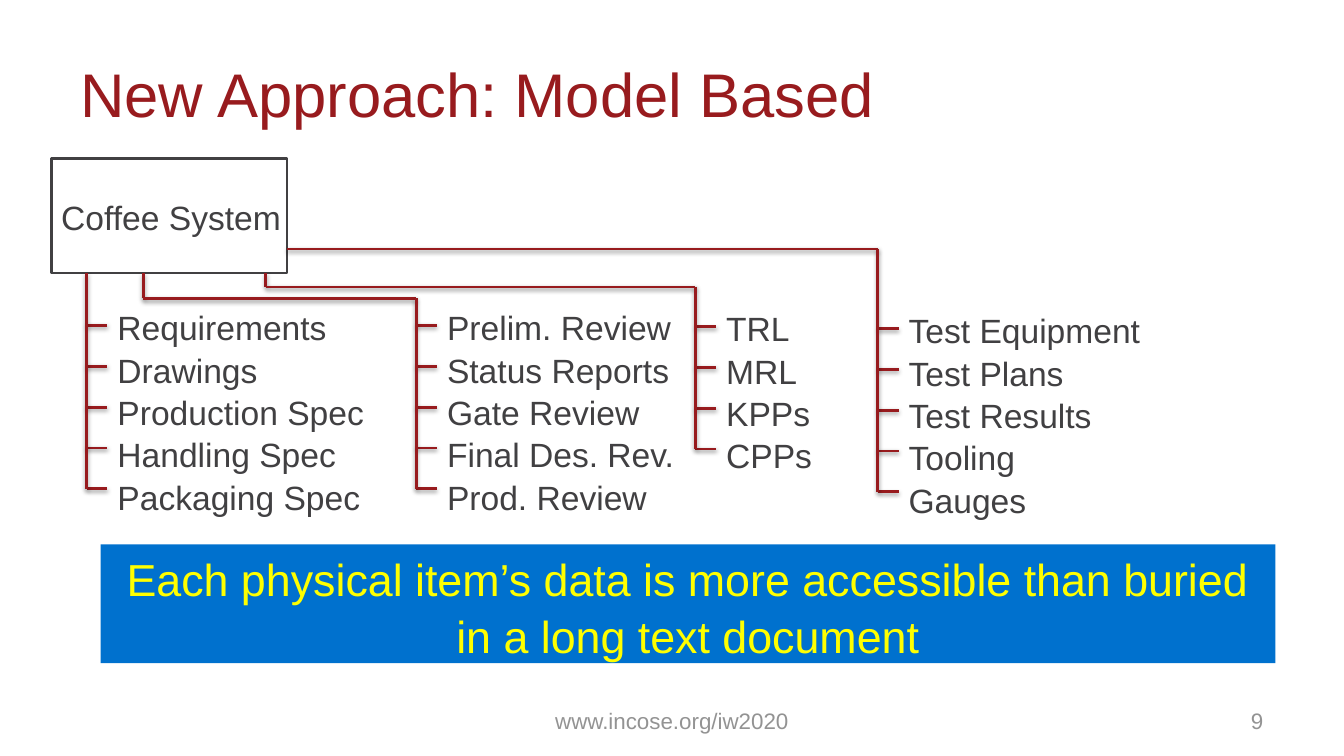
import itertools

import lxml.etree
import pptx
import pptx.dml.color
import pptx.enum.shapes
import pptx.enum.text
import pptx.oxml.ns
import pptx.util

RED = pptx.dml.color.RGBColor(0x98, 0x1B, 0x1E)
DARK = pptx.dml.color.RGBColor(0x41, 0x40, 0x42)
GREY = pptx.dml.color.RGBColor(0x93, 0x93, 0x93)
BLUE = pptx.dml.color.RGBColor(0x00, 0x71, 0xCE)
YELLOW = pptx.dml.color.RGBColor(0xFF, 0xFF, 0x00)

ALIGN = pptx.enum.text.PP_ALIGN
ANCHOR = pptx.enum.text.MSO_ANCHOR
RECTANGLE = pptx.enum.shapes.MSO_SHAPE.RECTANGLE
STRAIGHT = pptx.enum.shapes.MSO_CONNECTOR.STRAIGHT

WIDTH, HEIGHT = pptx.util.Inches(13.34), pptx.util.Inches(7.5)
COLUMN, ROW = WIDTH / 100, HEIGHT / 100

TITLE_BOX = (5, 4, 90, 16.67)
ROOT_BOX = (3.82, 20.93, 17.54, 15.2)
BANNER_BOX = (7.5, 72, 87.4, 15.73)
ADDRESS_BOX = (34.18, 92.67, 31.63, 5.33)
NUMBER_BOX = (71.66, 92.67, 23.31, 5.33)

TICK, FIRST_TICK, ITEM_PITCH = 1.56, 3.33, 5.4

# Each branch: list box, exit from the root box as shares of its size, items.
BRANCHES = [
    ((8, 39.73, 20, 28.27), (0.15, 1),
     ["Requirements", "Drawings", "Production Spec", "Handling Spec", "Packaging Spec"]),
    ((32.53, 39.73, 18.6, 28.27), (0.39, 1.22),
     ["Prelim. Review", "Status Reports", "Gate Review", "Final Des. Rev.", "Prod. Review"]),
    ((53.3, 39.87, 7.95, 22.93), (0.91, 1.12),
     ["TRL", "MRL", "KPPs", "CPPs"]),
    ((66.87, 40.13, 18.9, 28.27), (1, 0.79),
     ["Test Equipment", "Test Plans", "Test Results", "Tooling", "Gauges"]),
]


def to_emu(box):
    """Turn a box in columns and rows into slide lengths."""
    return [round(length * unit) for length, unit in zip(box, (COLUMN, ROW) * 2)]


def write(frame, lines, size, color, align=ALIGN.LEFT, spacing=1.05):
    """Write one paragraph per line in the given style."""
    for index, line in enumerate(lines):
        paragraph = frame.add_paragraph() if index else frame.paragraphs[0]
        paragraph.alignment = align
        paragraph.line_spacing = spacing
        run = paragraph.add_run()
        run.text = line
        run.font.name = "Arial"
        run.font.size = pptx.util.Pt(size)
        run.font.color.rgb = color


def set_margins(frame):
    """Give a title or footer its wide margins and middle anchor."""
    frame.margin_left = frame.margin_right = pptx.util.Inches(0.13)
    frame.margin_top = frame.margin_bottom = pptx.util.Inches(0.07)
    frame.vertical_anchor = ANCHOR.MIDDLE
    frame.word_wrap = True


def add_title(slide, box):
    """Place the slide title in its placeholder."""
    title = slide.shapes.title
    title.left, title.top, title.width, title.height = to_emu(box)
    set_margins(title.text_frame)
    write(title.text_frame, ["New Approach: Model Based"], 44, RED, spacing=1)


def add_footer(slide, box, words, align):
    """Place one footer entry."""
    frame = slide.shapes.add_textbox(*to_emu(box)).text_frame
    set_margins(frame)
    write(frame, [words], 16, GREY, align, spacing=1)


def add_line(slide, start, end):
    """Draw a red line with a soft shadow below it."""
    line = slide.shapes.add_connector(STRAIGHT, *to_emu(start + end))
    line.line.color.rgb = RED
    line.line.width = pptx.util.Pt(2)
    qn = pptx.oxml.ns.qn
    effects = lxml.etree.SubElement(line._element.spPr, qn("a:effectLst"))
    shadow = lxml.etree.SubElement(
        effects, qn("a:outerShdw"), blurRad=str(pptx.util.Pt(3.1)),
        dist=str(pptx.util.Pt(1.6)), dir="5400000", rotWithShape="0")
    black = lxml.etree.SubElement(shadow, qn("a:srgbClr"), val="000000")
    lxml.etree.SubElement(black, qn("a:alpha"), val="38000")


def add_panel(slide, box):
    """Place a plain rectangle without shadow."""
    panel = slide.shapes.add_shape(RECTANGLE, *to_emu(box))
    panel.shadow.inherit = False
    return panel


def add_root(slide, box):
    """Place the outlined system box that the branches leave from."""
    root = add_panel(slide, box)
    root.fill.background()
    root.line.color.rgb = DARK
    root.line.width = pptx.util.Pt(2)
    root.text_frame.word_wrap = False
    root.text_frame.margin_right = 0
    root.text_frame.vertical_anchor = ANCHOR.MIDDLE
    write(root.text_frame, ["Coffee System"], 24, DARK)


def add_branch(slide, box, root_box, departure, items):
    """Place a list with its ticks and spine, and lead the spine to the root."""
    left, top = box[:2]
    root_left, root_top, root_width, root_height = root_box
    frame = slide.shapes.add_textbox(*to_emu(box)).text_frame
    frame.word_wrap = False
    write(frame, items, 24, DARK)

    spine = left - TICK
    ticks = [top + FIRST_TICK + ITEM_PITCH * index for index in range(len(items))]
    for tick in ticks:
        add_line(slide, (spine, tick), (left, tick))

    start = root_left + departure[0] * root_width
    bus = root_top + departure[1] * root_height
    route = [(start, min(bus, root_top + root_height)), (start, bus),
             (spine, bus), (spine, ticks[-1])]
    for here, there in itertools.pairwise(route):
        if max(abs(here[0] - there[0]), abs(here[1] - there[1])) > 0.1:
            add_line(slide, here, there)


def add_banner(slide, box):
    """Place the blue conclusion banner."""
    banner = add_panel(slide, box)
    banner.fill.solid()
    banner.fill.fore_color.rgb = BLUE
    banner.line.fill.background()
    banner.text_frame.word_wrap = True
    banner.text_frame.vertical_anchor = ANCHOR.TOP
    message = "Each physical item’s data is more accessible than buried in a long text document"
    write(banner.text_frame, [message], 32, YELLOW, ALIGN.CENTER)


def main():
    """Build the slide and save it."""
    deck = pptx.Presentation()
    deck.slide_width, deck.slide_height = WIDTH, HEIGHT
    slide = deck.slides.add_slide(deck.slide_layouts[5])
    add_title(slide, TITLE_BOX)
    add_footer(slide, ADDRESS_BOX, "www.incose.org/iw2020", ALIGN.CENTER)
    add_footer(slide, NUMBER_BOX, "9", ALIGN.RIGHT)
    add_root(slide, ROOT_BOX)
    for box, departure, items in BRANCHES:
        add_branch(slide, box, ROOT_BOX, departure, items)
    add_banner(slide, BANNER_BOX)
    deck.save("out.pptx")


if __name__ == "__main__":
    main()
